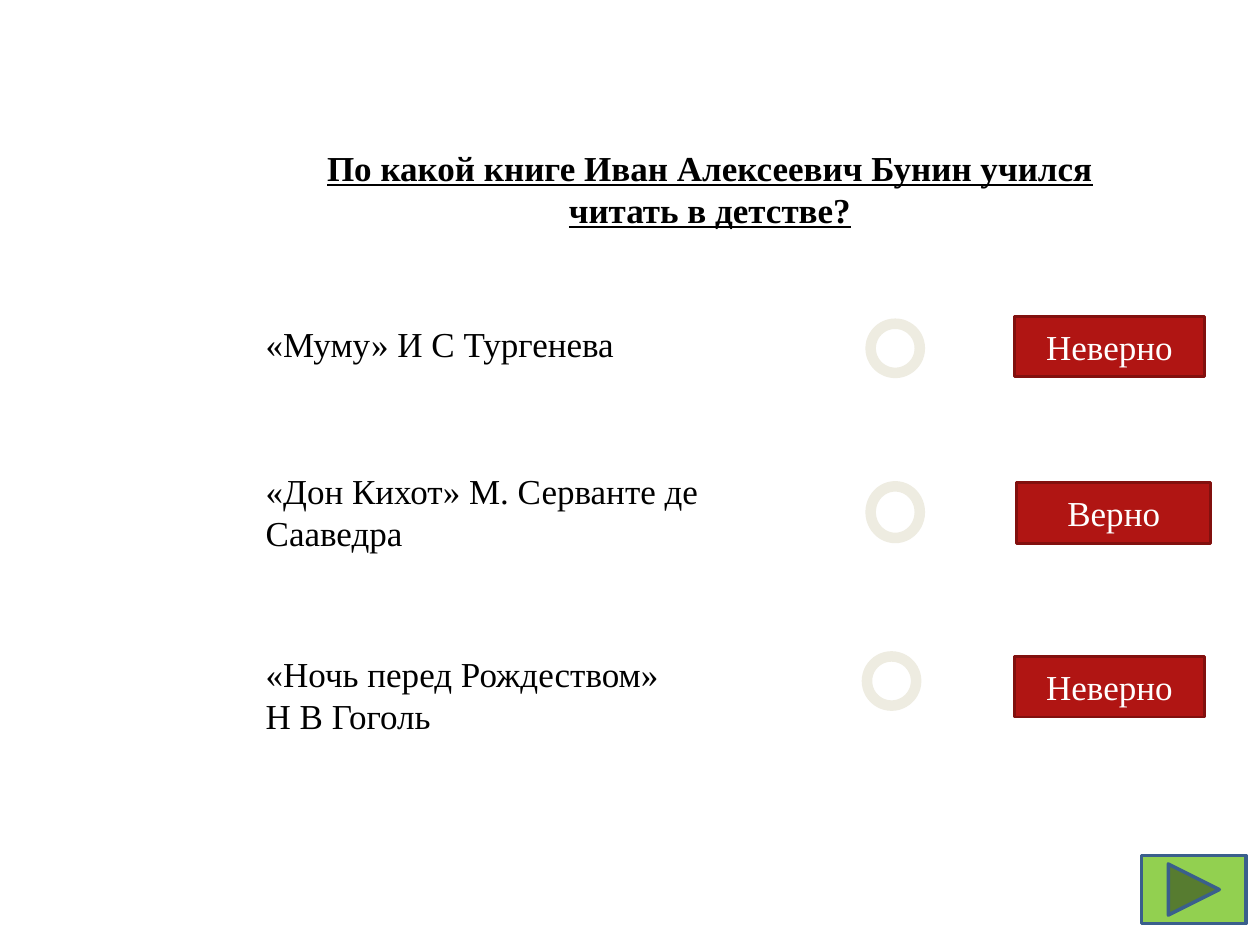
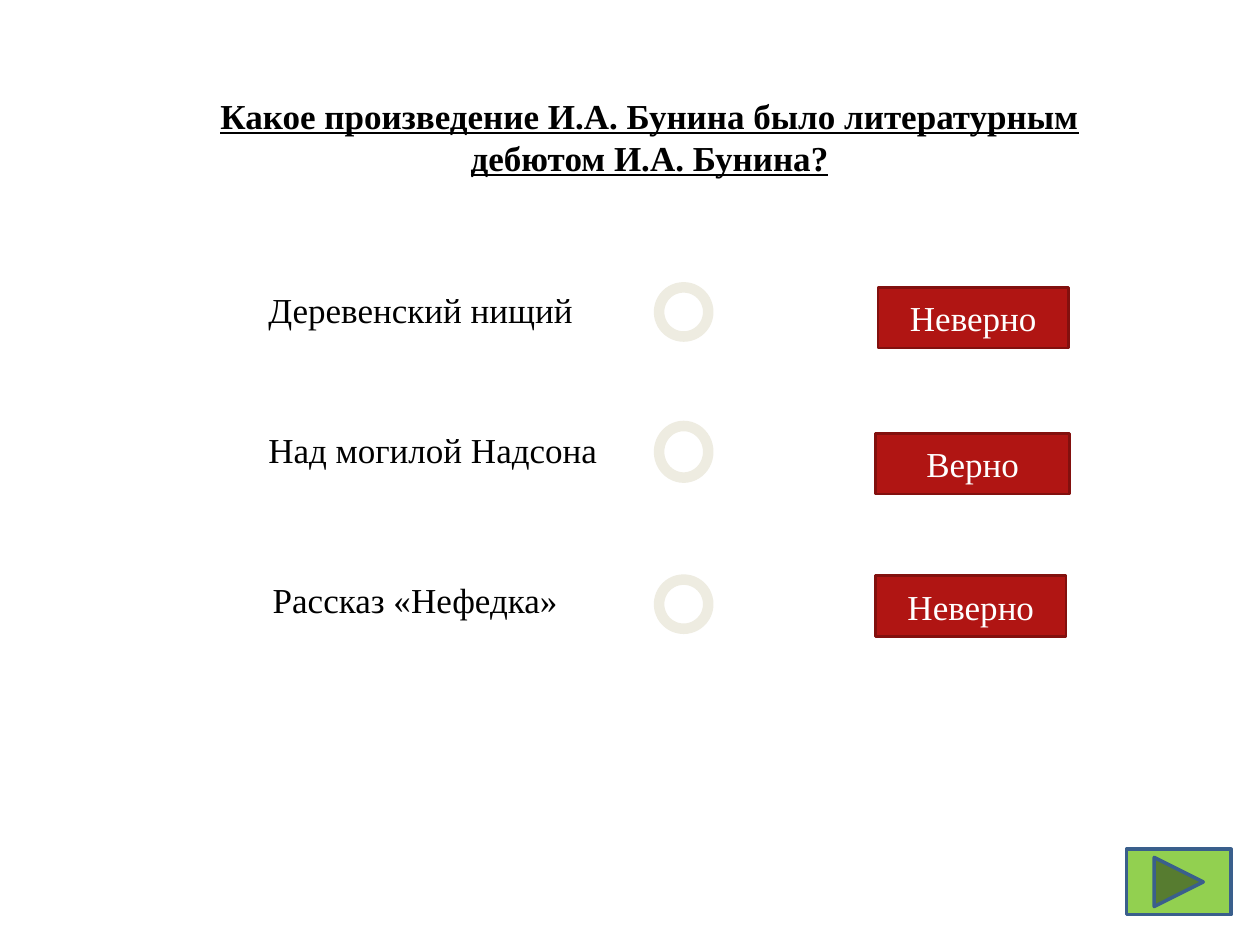
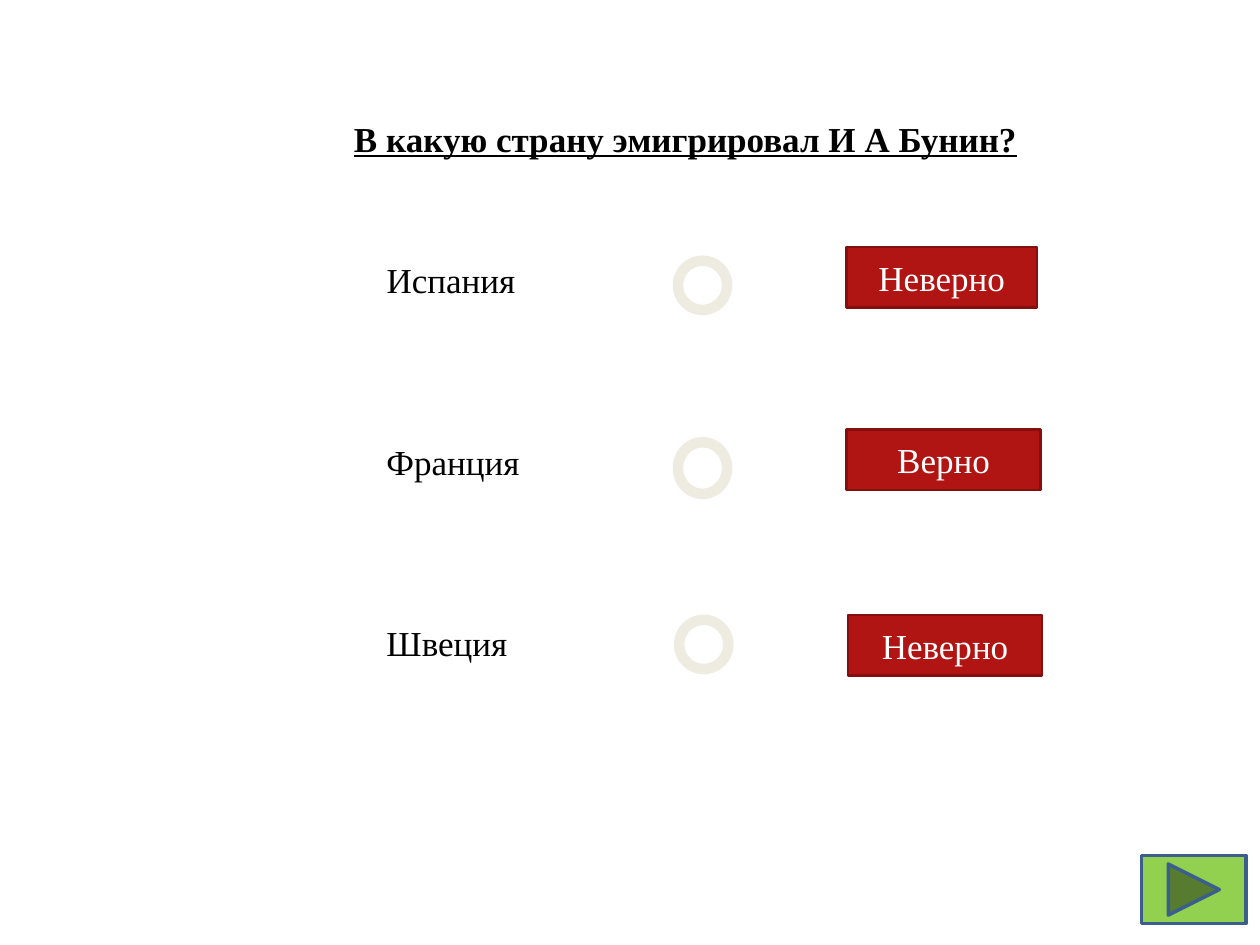
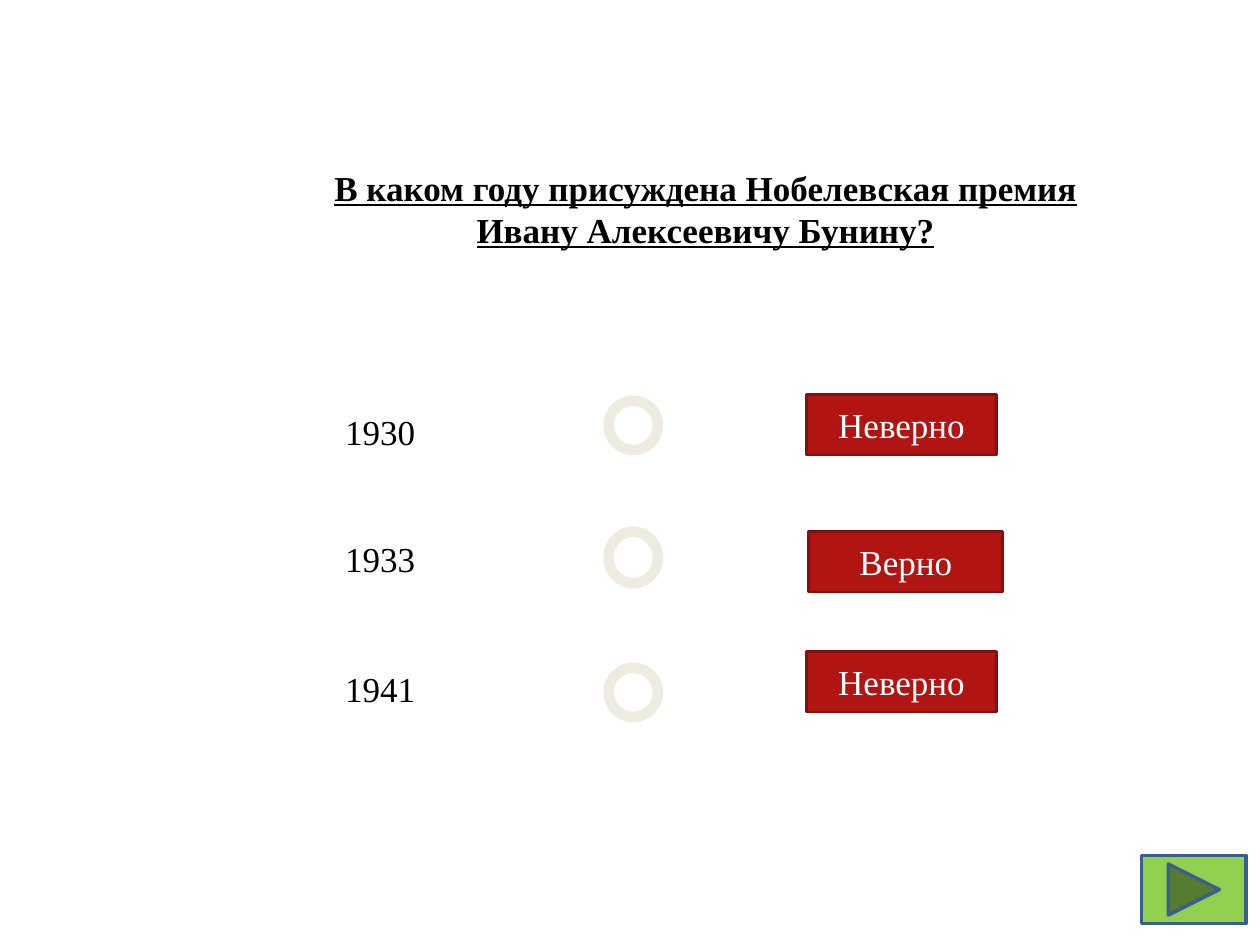
from pptx import Presentation
from pptx.dml.color import RGBColor
from pptx.enum.shapes import MSO_SHAPE
from pptx.enum.text import MSO_ANCHOR, MSO_AUTO_SIZE, PP_ALIGN
from pptx.util import Pt

LEFT, CENTER = PP_ALIGN.LEFT, PP_ALIGN.CENTER
TOP, MIDDLE = MSO_ANCHOR.TOP, MSO_ANCHOR.MIDDLE
FIXED, GROW = MSO_AUTO_SIZE.NONE, MSO_AUTO_SIZE.SHAPE_TO_FIT_TEXT
RECT, OVAL = MSO_SHAPE.RECTANGLE, MSO_SHAPE.OVAL
NEXT = MSO_SHAPE.ACTION_BUTTON_FORWARD_OR_NEXT

COLORS = {
    "text": "000000", "white": "FFFFFF", "ring": "EEECE1",
    "red": "B01513", "dark": "82100E", "green": "92D050", "blue": "3A5F8C",
}
FONT, SIZE = "Times New Roman", 20
RIGHT, WRONG = "Верно", "Неверно"
ONE, TWO = 31.7, 55.4  # heights of one and two text lines
SLIM, WIDE = 108.7, 110.9  # widths of a verdict
CORNER = (652.3, 488.9, 59.8, 38.9)

# Each answer: text, text box, ring (left, top, height),
# verdict, verdict place (left, top, width), alignment if not left
QUIZ = [
    {
        "title": "По какой книге Иван Алексеевич Бунин учился\vчитать в детстве?",
        "box": (129.6, 79.9, 552.2, 79.9),
        "rows": [
            ("«Муму» И С Тургенева", (144.7, 180.7, 355, ONE),
             (497.5, 185, 28.1), WRONG, (579.6, 180.7, SLIM)),
            ("«Дон Кихот» М. Серванте де Сааведра", (144.7, 265, 270, TWO),
             (497.5, 277.9, 29.5), RIGHT, (581, 275.8, WIDE)),
            ("«Ночь перед Рождеством» Н В Гоголь", (144.7, 369.4, 242, TWO),
             (495.4, 375.1, 28.1), WRONG, (579.6, 375.1, SLIM)),
        ],
    },
    {
        "title": "Какое произведение И.А. Бунина было литературным "
                 "дебютом И.А. Бунина?",
        "box": (78.5, 50.4, 585.4, TWO),
        "next": (643.7, 485.3, 59.8, 37.4),
        "rows": [
            ("Деревенский нищий", (146.2, 161.3, 202.3, ONE),
             (376.6, 164.2, 28.1), WRONG, (501.8, 164.2, SLIM)),
            ("Над могилой Надсона", (146.2, 241.2, 253.4, ONE),
             (376.6, 243.4, 29.5), RIGHT, (500.4, 247.7, WIDE)),
            ("Рассказ «Нефедка»", (139, 326.9, 196.6, ONE),
             (376.6, 331.2, 28.1), WRONG, (500.4, 329, SLIM), CENTER),
        ],
    },
    {
        "title": "В какую страну эмигрировал И А Бунин?",
        "box": (121.7, 63.4, 472.3, 53.3),
        "indent": 73.4,
        "rows": [
            ("Испания", (213.8, 144, 203, ONE),
             (387.4, 149, 28.1), WRONG, (483.8, 141.1, SLIM)),
            ("Франция", (213.8, 248.4, 163.4, ONE),
             (387.4, 252.7, 29.5), RIGHT, (483.8, 245.5, WIDE)),
            ("Швеция", (213.8, 351.4, 213.8, ONE),
             (388.1, 354.2, 28.1), WRONG, (484.6, 351.4, WIDE)),
        ],
    },
    {
        "title": "В каком году присуждена Нобелевская премия "
                 "Ивану Алексеевичу Бунину?",
        "box": (161.3, 91.4, 483.8, TWO),
        "rows": [
            ("1930", (190.1, 231.1, 315.4, ONE),
             (347.8, 229, 28.1), WRONG, (460.8, 225.4, SLIM)),
            ("1933", (190.1, 303.8, 72, ONE),
             (347.8, 303.8, 29.5), RIGHT, (462.2, 303.8, WIDE)),
            ("1941", (190.1, 378, 146.2, ONE),
             (347.8, 381.6, 28.1), WRONG, (460.8, 372.2, SLIM)),
        ],
    },
]


def color(name):
    return RGBColor.from_string(COLORS[name])


class Deck:
    def __init__(self):
        self.prs = Presentation()
        self.prs.slide_width, self.prs.slide_height = Pt(720), Pt(540)
        self.slide = None

    def add(self):
        self.slide = self.prs.slides.add_slide(self.prs.slide_layouts[5])

    def fill_text(self, shape, text, tone="text", align=LEFT, anchor=TOP, bold=False):
        frame = shape.text_frame
        frame.text = text
        frame.word_wrap = True
        frame.vertical_anchor = anchor
        par = frame.paragraphs[0]
        par.alignment = align
        for run in par.runs:
            font = run.font
            font.name, font.size = FONT, Pt(SIZE)
            font.bold = font.underline = bold
            font.color.rgb = color(tone)
        return par

    def title(self, text, box, indent=0):
        shape = self.slide.shapes.title
        shape.left, shape.top, shape.width, shape.height = map(Pt, box)
        align = LEFT if indent else CENTER
        par = self.fill_text(shape, text, align=align, bold=True)
        shape.text_frame.auto_size = FIXED
        if indent:
            par._p.get_or_add_pPr().set("marL", str(Pt(indent)))

    def label(self, text, box, align):
        shape = self.slide.shapes.add_textbox(*map(Pt, box))
        self.fill_text(shape, text, align=align)
        shape.text_frame.auto_size = GROW

    def shape(self, kind, box, fill, line, width):
        shape = self.slide.shapes.add_shape(kind, *map(Pt, box))
        shape.shadow.inherit = False
        shape.fill.solid()
        shape.fill.fore_color.rgb = color(fill)
        shape.line.color.rgb = color(line)
        shape.line.width = Pt(width)
        return shape

    def ring(self, left, top, height):
        self.shape(OVAL, (left, top, 28.1, height), "white", "ring", 6)

    def badge(self, text, left, top, width):
        shape = self.shape(RECT, (left, top, width, 34.6), "red", "dark", 1.5)
        self.fill_text(shape, text, "white", CENTER, MIDDLE)

    def answer(self, text, box, ring, word, badge, align=LEFT):
        self.label(text, box, align)
        self.ring(*ring)
        self.badge(word, *badge)

    def button(self, box):
        self.shape(NEXT, box, "green", "blue", 2)


def main():
    deck = Deck()
    for page in QUIZ:
        deck.add()
        deck.title(page["title"], page["box"], page.get("indent", 0))
        for row in page["rows"]:
            deck.answer(*row)
        deck.button(page.get("next", CORNER))
    deck.prs.save("out.pptx")


if __name__ == "__main__":
    main()
